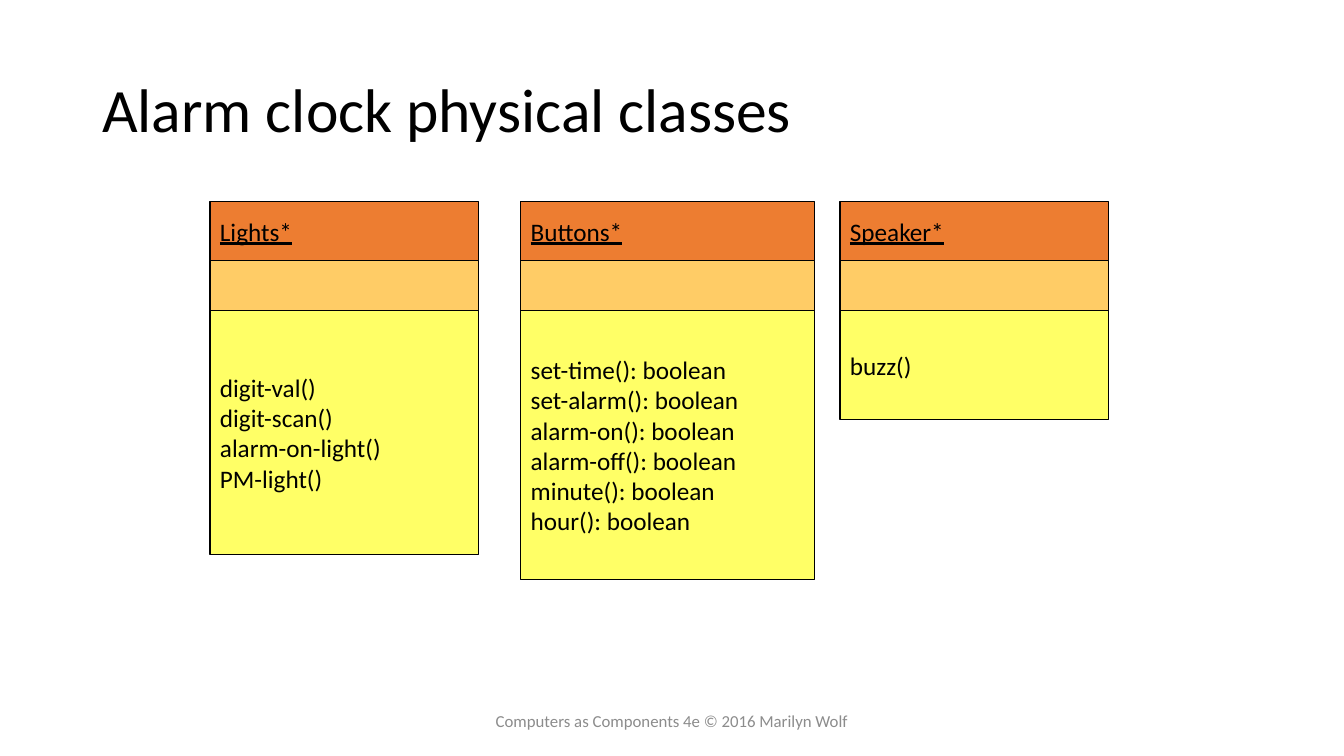
from dataclasses import dataclass

from pptx import Presentation
from pptx.dml.color import RGBColor
from pptx.enum.shapes import MSO_SHAPE
from pptx.enum.text import MSO_ANCHOR, PP_ALIGN
from pptx.shapes.autoshape import Shape
from pptx.slide import Slide
from pptx.util import Emu, Pt

SCALE = 9525


@dataclass(frozen=True)
class Theme:
    font: str = "Calibri"
    ink: str = "000000"
    muted: str = "8C8C8C"
    head: str = "ED7D31"
    fields: str = "FFCC66"
    methods: str = "FFFF66"
    title: int = 44
    body: int = 18
    small: int = 12
    line: float = 0.75


@dataclass(frozen=True)
class Box:
    left: int
    top: int
    width: int
    height: int


@dataclass(frozen=True)
class UmlClass:
    name: str
    left: int
    width: int
    depth: int
    methods: tuple[str, ...]


THEME = Theme()
TOP = 192
HEAD = 56
FIELDS = 48
CLASSES = (
    UmlClass("Lights*", 200, 256, 232,
             ("digit-val()", "digit-scan()", "alarm-on-light()", "PM-light()")),
    UmlClass("Buttons*", 496, 280, 256,
             ("set-time(): boolean", "set-alarm(): boolean",
              "alarm-on(): boolean", "alarm-off(): boolean",
              "minute(): boolean", "hour(): boolean")),
    UmlClass("Speaker*", 800, 256, 104, ("buzz()",)),
)


def px(size: int) -> Emu:
    return Emu(size * SCALE)


def place(box: Box) -> tuple[Emu, Emu, Emu, Emu]:
    return px(box.left), px(box.top), px(box.width), px(box.height)


def write(shape: Shape, *lines: str, size: int = THEME.body,
          color: str = THEME.ink, under: bool = False, wrap: bool = False,
          align: PP_ALIGN = PP_ALIGN.LEFT, space: float = 1.0) -> None:
    frame = shape.text_frame
    frame.word_wrap = wrap
    frame.vertical_anchor = MSO_ANCHOR.MIDDLE
    frame.text = "\n".join(lines)
    for para in frame.paragraphs:
        para.alignment = align
        para.line_spacing = space
        for run in para.runs:
            run.font.name = THEME.font
            run.font.size = Pt(size)
            run.font.color.rgb = RGBColor.from_string(color)
            run.font.underline = under


def add_label(slide: Slide, box: Box) -> Shape:
    return slide.shapes.add_textbox(*place(box))


def add_band(slide: Slide, box: Box, fill: str) -> Shape:
    band = slide.shapes.add_shape(MSO_SHAPE.RECTANGLE, *place(box))
    band.shadow.inherit = False
    band.fill.solid()
    band.fill.fore_color.rgb = RGBColor.from_string(fill)
    band.line.color.rgb = RGBColor.from_string(THEME.ink)
    band.line.width = Pt(THEME.line)
    return band


def add_class(slide: Slide, item: UmlClass) -> None:
    top = TOP
    bands = []
    for height, fill in ((HEAD, THEME.head), (FIELDS, THEME.fields),
                         (item.depth, THEME.methods)):
        box = Box(item.left, top, item.width, height)
        bands.append(add_band(slide, box, fill))
        top += height
    write(bands[0], item.name, under=True)
    write(bands[2], *item.methods)


def main() -> None:
    deck = Presentation()
    deck.slide_width, deck.slide_height = px(1280), px(720)
    slide = deck.slides.add_slide(deck.slide_layouts[6])
    title = add_label(slide, Box(88, 38, 1104, 139))
    write(title, "Alarm clock physical classes", size=THEME.title,
          wrap=True, space=0.9)
    for item in CLASSES:
        add_class(slide, item)
    footer = add_label(slide, Box(424, 667, 432, 38))
    write(footer, "Computers as Components 4e © 2016 Marilyn Wolf",
          size=THEME.small, color=THEME.muted, wrap=True,
          align=PP_ALIGN.CENTER)
    deck.save("out.pptx")


if __name__ == "__main__":
    main()
